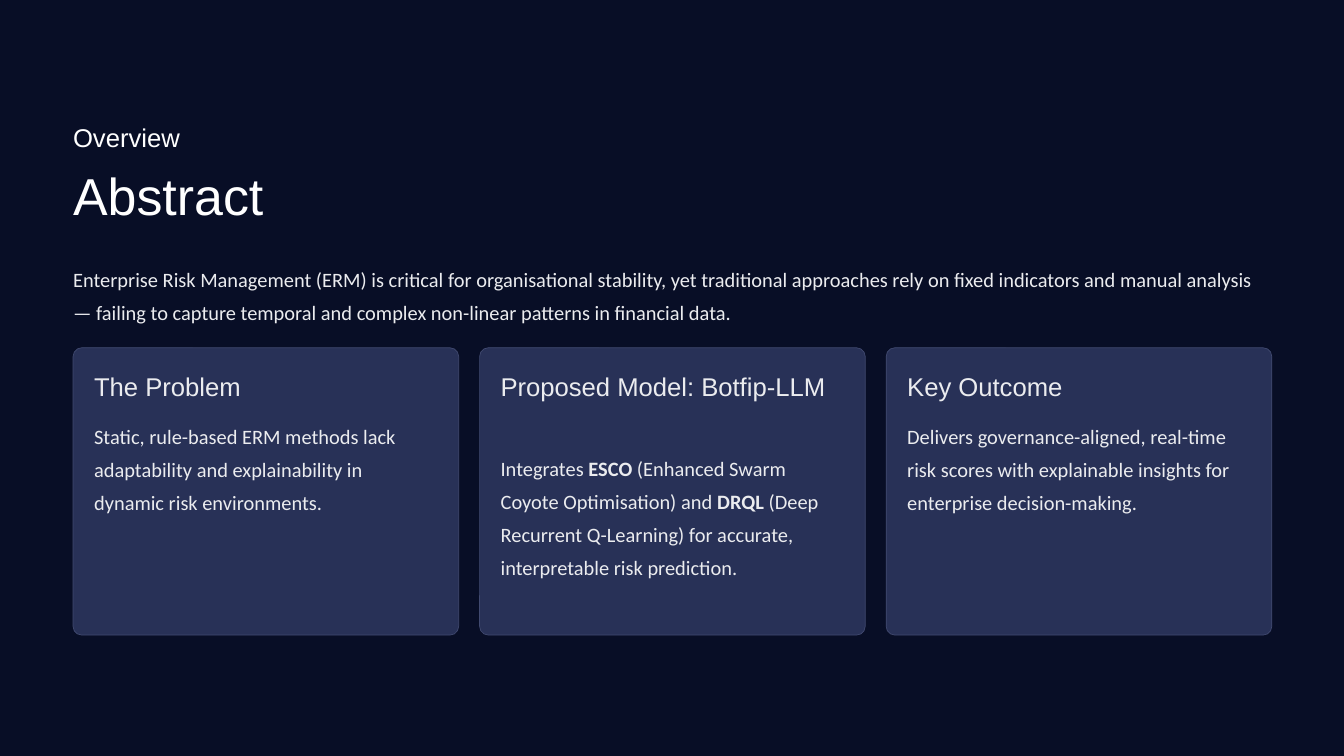
from pptx import Presentation
from pptx.dml.color import RGBColor
from pptx.enum.shapes import MSO_SHAPE
from pptx.enum.text import MSO_ANCHOR, MSO_AUTO_SIZE, PP_ALIGN
from pptx.util import Inches, Pt

ROUNDED = MSO_SHAPE.ROUNDED_RECTANGLE
TOP = MSO_ANCHOR.TOP
NO_FIT = MSO_AUTO_SIZE.NONE
LEFT = PP_ALIGN.LEFT

NAVY = RGBColor(0x08, 0x0E, 0x26)
CARD_FILL = RGBColor(0x28, 0x31, 0x57)
CARD_LINE = RGBColor(0x41, 0x4A, 0x70)
WHITE = RGBColor(0xFF, 0xFF, 0xFF)
PALE = RGBColor(0xEB, 0xEC, 0xEF)

TITLE = {"font": {"name": "Arial", "size": Pt(44.5)}, "spacing": Pt(55.5)}
HEADING = {"font": {"name": "Arial", "size": Pt(22)}, "spacing": Pt(27.5)}
BODY = {"font": {"name": "Calibri", "size": Pt(17.5)}, "spacing": Pt(28.5)}

MARGIN = 0.87
CARD_TOP, CARD_W, CARD_H = 4.14, 4.59, 3.42
CARD_GAP = 0.25
PAD = 0.25
TEXT_W = 4.08

INTRO = (
    "Enterprise Risk Management (ERM) is critical for organisational stability, "
    "yet traditional approaches rely on fixed indicators and manual analysis — "
    "failing to capture temporal and complex non-linear patterns in financial data."
)

# Heading, heading height, body top, body height, body runs as (text, bold)
CARDS = [
    ("The Problem", 0.39, 4.94, 1.59, [
        ("Static, rule-based ERM methods lack adaptability and explainability "
         "in dynamic risk environments.", False),
    ]),
    ("Proposed Model: Botfip-LLM", 0.78, 5.32, 1.98, [
        ("Integrates ", False),
        ("ESCO", True),
        (" (Enhanced Swarm Coyote Optimisation) and ", False),
        ("DRQL", True),
        (" (Deep Recurrent Q-Learning) for accurate, interpretable risk "
         "prediction.", False),
    ]),
    ("Key Outcome", 0.39, 4.94, 1.59, [
        ("Delivers governance-aligned, real-time risk scores with explainable "
         "insights for enterprise decision-making.", False),
    ]),
]


class SlideBuilder:
    def __init__(self, prs):
        self.s = prs.slides.add_slide(prs.slide_layouts[5])
        fill = self.s.background.fill
        fill.solid()
        fill.fore_color.rgb = NAVY

    def set_text(self, sp, runs, style, color):
        """Fill a text shape with one paragraph of (text, bold) runs."""
        tf = sp.text_frame
        frame = {"margin_left": 0, "margin_top": 0, "margin_right": 0,
                 "margin_bottom": 0, "word_wrap": True, "auto_size": NO_FIT,
                 "vertical_anchor": TOP}
        for key, value in frame.items():
            setattr(tf, key, value)
        p = tf.paragraphs[0]
        p.alignment = LEFT
        p.line_spacing = style["spacing"]
        for text, bold in runs:
            r = p.add_run()
            r.text = text
            for key, value in style["font"].items():
                setattr(r.font, key, value)
            r.font.bold = bold
            r.font.color.rgb = color

    def title(self, x, y, w, h, text):
        sp = self.s.shapes.title
        box = {"left": x, "top": y, "width": w, "height": h}
        for key, value in box.items():
            setattr(sp, key, Inches(value))
        self.set_text(sp, [(text, False)], TITLE, WHITE)

    def text(self, x, y, w, h, runs, style, color=PALE):
        sp = self.s.shapes.add_textbox(Inches(x), Inches(y), Inches(w), Inches(h))
        self.set_text(sp, runs, style, color)

    def panel(self, x, y, w, h):
        sp = self.s.shapes.add_shape(
            ROUNDED, Inches(x), Inches(y), Inches(w), Inches(h))
        sp.adjustments[0] = 0.03
        sp.shadow.inherit = False
        sp.fill.solid()
        sp.fill.fore_color.rgb = CARD_FILL
        sp.line.color.rgb = CARD_LINE
        sp.line.width = Pt(0.6)

    def card(self, x, heading, heading_h, body_y, body_h, runs):
        self.panel(x, CARD_TOP, CARD_W, CARD_H)
        self.text(x + PAD, 4.4, TEXT_W, heading_h, [(heading, False)], HEADING)
        self.text(x + PAD, body_y, TEXT_W, body_h, runs, BODY)


def main():
    prs = Presentation()
    prs.slide_width, prs.slide_height = Inches(16), Inches(9)
    slide = SlideBuilder(prs)
    slide.text(MARGIN, 1.44, 3.1, 0.39, [("Overview", False)], HEADING, WHITE)
    slide.title(MARGIN, 1.92, 6.2, 0.78, "Abstract")
    slide.text(MARGIN, 3.07, 14.26, 0.79, [(INTRO, False)], BODY)
    for i, card in enumerate(CARDS):
        slide.card(MARGIN + i * (CARD_W + CARD_GAP), *card)
    prs.save("out.pptx")


if __name__ == "__main__":
    main()
